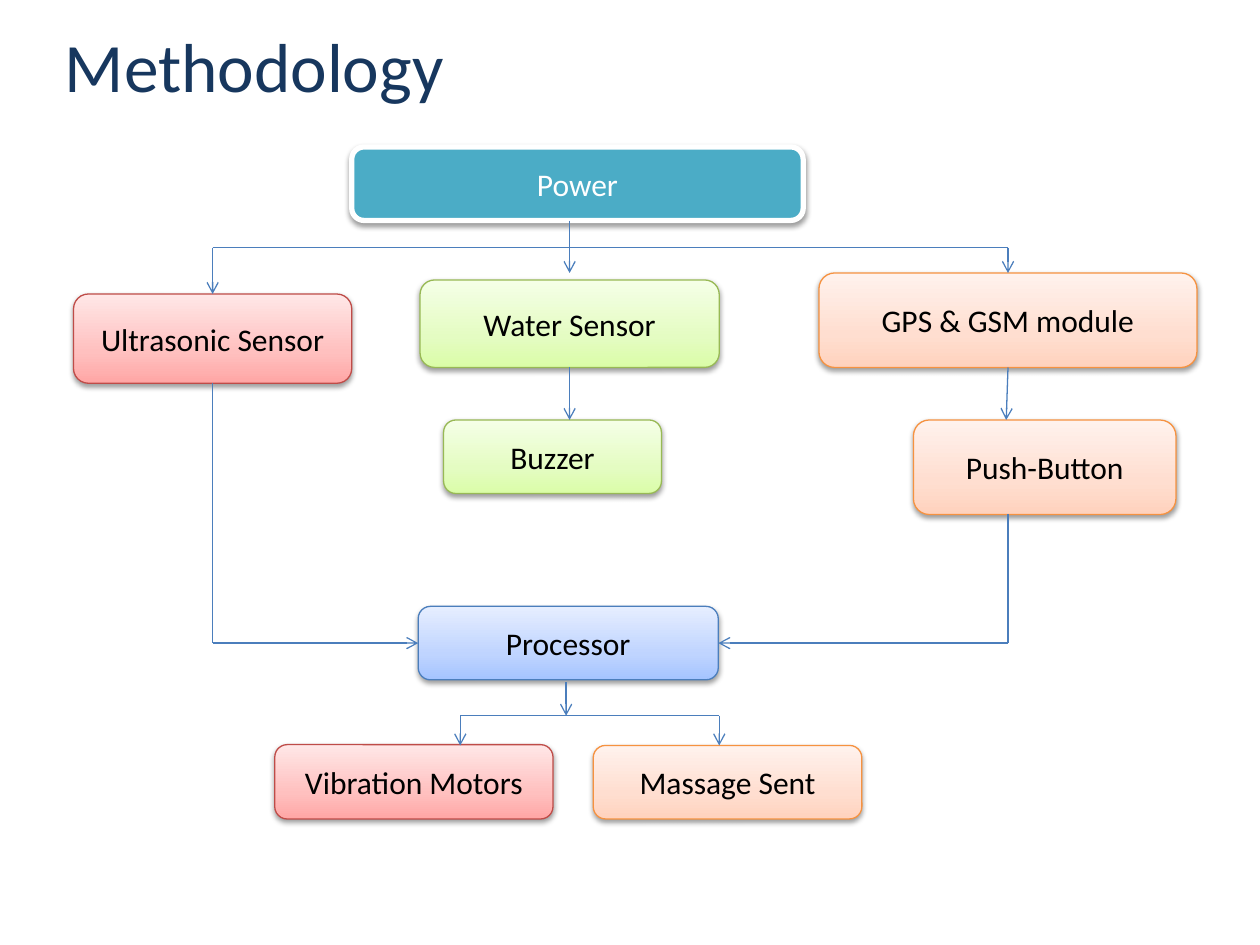
from copy import deepcopy

from lxml.etree import SubElement
from pptx import Presentation
from pptx.dml.color import RGBColor
from pptx.enum.shapes import MSO_CONNECTOR, MSO_SHAPE
from pptx.enum.text import MSO_ANCHOR, PP_ALIGN
from pptx.oxml.ns import qn
from pptx.util import Pt

COLORS = {"title": "17375E", "power": "4BACC6", "white": "FFFFFF",
          "black": "000000", "arrow": "4B7EBC"}
# Outline, then gradient from bottom to top
STYLES = {
    "red": ("BF4C48", ("FFA6A5", "FFC0BF", "FFE7E7")),
    "green": ("98B955", ("DAFDA7", "E4FCC2", "F5FFE7")),
    "orange": ("F69240", ("FFD2BD", "FFDED0", "FFF2ED")),
    "blue": ("4B7EBC", ("A4C4FF", "BFD4FF", "E6EEFF")),
}
STOPS = (0, 0.35, 1)
TOP, LEFT, BOTTOM, RIGHT = range(4)

# Label, style, then left, top, width and height within the flowchart
STEPS = [
    ("Power", "power", 159, 0, 258, 42),
    ("GPS & GSM module", "orange", 426, 72, 216, 54),
    ("Water Sensor", "green", 198, 76, 171, 50),
    ("Ultrasonic Sensor", "red", 0, 84, 159, 51),
    ("Buzzer", "green", 211.5, 156, 124.5, 42),
    ("Push-Button", "orange", 480, 156, 150, 54),
    ("Processor", "blue", 197, 262.5, 171.5, 42),
    ("Vibration Motors", "red", 115, 341.5, 159, 42.5),
    ("Massage Sent", "orange", 297, 342, 153.5, 42),
]

# Columns and levels that the lines run along
ULTRASONIC_X, WATER_X, GPS_X = 79.5, 283.5, 534
VIBRATION_X, OUTPUT_X, MESSAGE_X = 221, 281.5, 369
SENSOR_BUS, PROCESSOR_Y, OUTPUT_BUS = 57.5, 283.5, 325

# Start, end, arrowhead, joined start and joined end
LINKS = [
    ((WATER_X, 42), (WATER_X, 72), True, None, None),
    ((ULTRASONIC_X, SENSOR_BUS), (GPS_X, SENSOR_BUS), False, None, None),
    ((ULTRASONIC_X, SENSOR_BUS), (ULTRASONIC_X, 84), True, None, ("Ultrasonic Sensor", TOP)),
    ((GPS_X, SENSOR_BUS), (GPS_X, 72), True, None, ("GPS & GSM module", TOP)),
    ((WATER_X, 126), (WATER_X, 156), True, ("Water Sensor", BOTTOM), None),
    ((GPS_X, 126), (GPS_X - 1, 156), True, ("GPS & GSM module", BOTTOM), None),
    ((ULTRASONIC_X, 135), (ULTRASONIC_X, PROCESSOR_Y), False, ("Ultrasonic Sensor", BOTTOM), None),
    ((ULTRASONIC_X, PROCESSOR_Y), (197, PROCESSOR_Y), True, None, ("Processor", LEFT)),
    ((GPS_X, 210), (GPS_X, PROCESSOR_Y), False, None, None),
    ((GPS_X, PROCESSOR_Y), (368.5, PROCESSOR_Y), True, None, ("Processor", RIGHT)),
    ((OUTPUT_X, 306), (OUTPUT_X, OUTPUT_BUS), True, None, None),
    ((VIBRATION_X, OUTPUT_BUS), (MESSAGE_X, OUTPUT_BUS), False, None, None),
    ((VIBRATION_X, OUTPUT_BUS), (VIBRATION_X, 342), True, None, None),
    ((MESSAGE_X, OUTPUT_BUS), (MESSAGE_X, 342), True, None, None),
]


def rgb(name):
    return RGBColor.from_string(COLORS.get(name, name))


def format_text(paragraph, size, color):
    font = paragraph.runs[0].font
    font.name, font.size = "Calibri", Pt(size)
    font.color.rgb = rgb(color)


def add_title(slide, left, top, width, height):
    box = slide.shapes.add_textbox(Pt(left), Pt(top), Pt(width), Pt(height))
    frame = box.text_frame
    frame.word_wrap = True
    frame.vertical_anchor = MSO_ANCHOR.TOP
    frame.margin_top = Pt(1.5)
    frame.text = "Methodology"
    format_text(frame.paragraphs[0], 39.6, "title")


def fill_gradient(shape, colors):
    shape.fill.gradient()
    shape.fill.gradient_angle = 90
    stop_list = shape.element.spPr.find(".//" + qn("a:gsLst"))
    stop_list.insert(1, deepcopy(stop_list[0]))
    for stop, position, color in zip(shape.fill.gradient_stops, STOPS, colors):
        stop.position = position
        stop.color.rgb = rgb(color)


def add_shadow(shape):
    shape.shadow.inherit = False
    effects = shape.element.spPr.find(qn("a:effectLst"))
    shadow = SubElement(effects, qn("a:outerShdw"), blurRad=str(Pt(3.1)),
                        dist=str(Pt(1.6)), dir="5400000", rotWithShape="0")
    color = SubElement(shadow, qn("a:srgbClr"), val=COLORS["black"])
    SubElement(color, qn("a:alpha"), val="38000")


def add_step(slide, label, style, left, top, width, height):
    shape = slide.shapes.add_shape(MSO_SHAPE.ROUNDED_RECTANGLE,
                                   Pt(left), Pt(top), Pt(width), Pt(height))
    if style == "power":
        shape.fill.solid()
        shape.fill.fore_color.rgb = rgb("power")
        outline, line_width, text_color = "white", 3, "white"
    else:
        outline, gradient = STYLES[style]
        fill_gradient(shape, gradient)
        line_width, text_color = 0.75, "black"
    shape.line.color.rgb = rgb(outline)
    shape.line.width = Pt(line_width)
    add_shadow(shape)
    frame = shape.text_frame
    frame.text = label
    frame.vertical_anchor = MSO_ANCHOR.MIDDLE
    frame.paragraphs[0].alignment = PP_ALIGN.CENTER
    format_text(frame.paragraphs[0], 18, text_color)
    return shape


def add_link(slide, start, end, arrow):
    link = slide.shapes.add_connector(
        MSO_CONNECTOR.STRAIGHT, *(Pt(value) for value in (*start, *end)))
    link.line.color.rgb = rgb("arrow")
    link.line.width = Pt(0.75)
    if arrow:
        SubElement(link.line._get_or_add_ln(), qn("a:tailEnd"), type="arrow")
    SubElement(link.element.spPr, qn("a:effectLst"))
    return link


def add_flowchart(slide, left, top):
    # Steps
    steps = {}
    for label, style, x, y, width, height in STEPS:
        steps[label] = add_step(slide, label, style, left + x, top + y, width, height)
    # Lines between the steps
    for (x1, y1), (x2, y2), arrow, source, target in LINKS:
        link = add_link(slide, (left + x1, top + y1), (left + x2, top + y2), arrow)
        if source:
            link.begin_connect(steps[source[0]], source[1])
        if target:
            link.end_connect(steps[target[0]], target[1])


def main():
    presentation = Presentation()
    presentation.slide_width, presentation.slide_height = Pt(720), Pt(540)
    slide = presentation.slides.add_slide(presentation.slide_layouts[6])
    add_title(slide, 30, 12, 654, 99)
    add_flowchart(slide, 42, 84)
    presentation.save("out.pptx")


if __name__ == "__main__":
    main()
